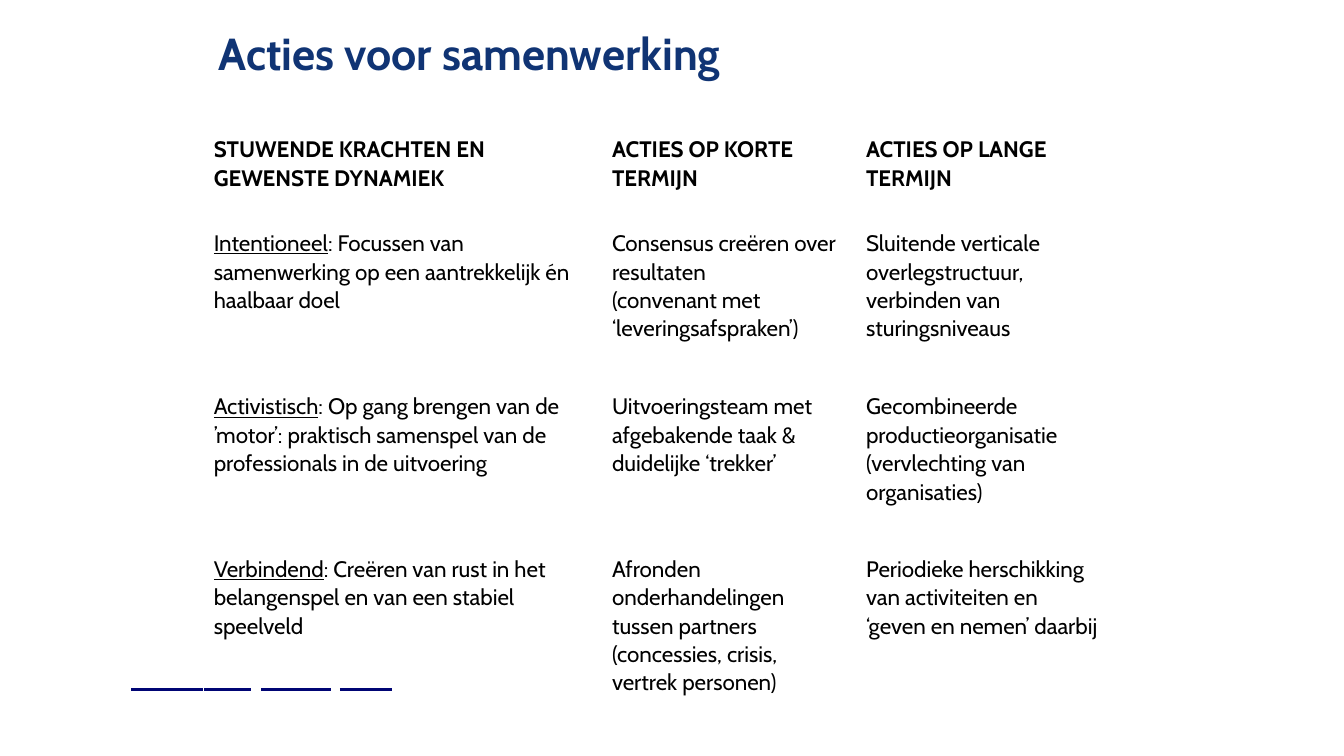
from dataclasses import dataclass

from lxml.etree import SubElement
from pptx import Presentation
from pptx.dml.color import RGBColor
from pptx.enum.shapes import MSO_CONNECTOR
from pptx.oxml.ns import qn
from pptx.util import Inches, Pt


@dataclass(frozen=True)
class Theme:
    font: str = "Cabin"
    title: str = "103474"
    body: str = "000000"
    rule: str = "000574"
    title_size: float = 32
    body_size: float = 16
    rule_width: float = 2.25


THEME = Theme()
WIDTHS = (3.95, 2.52, 2.52)
HEIGHTS = (0.93, 1.62, 1.61, 1.62)
DASHES = ((0, 1.19), (1.29, 0.69), (2.07, 0.52))  # offset, length

# A cell is a list of paragraphs; a (term, rest) pair underlines the term.
ROWS = [
    [
        ["STUWENDE KRACHTEN EN", "GEWENSTE DYNAMIEK"],
        ["ACTIES OP KORTE TERMIJN"],
        ["ACTIES OP LANGE TERMIJN"],
    ],
    [
        [("Intentioneel", ": Focussen van samenwerking op een aantrekkelijk én haalbaar doel")],
        ["Consensus creëren over resultaten", "(convenant met ‘leveringsafspraken’)"],
        ["Sluitende verticale overlegstructuur, verbinden van sturingsniveaus"],
    ],
    [
        [("Activistisch", ": Op gang brengen van de ’motor’: praktisch samenspel "
          "van de professionals in de uitvoering")],
        ["Uitvoeringsteam met afgebakende taak & duidelijke ‘trekker’"],
        ["Gecombineerde productieorganisatie (vervlechting van organisaties)"],
    ],
    [
        [("Verbindend", ": Creëren van rust in het belangenspel en van een stabiel speelveld")],
        ["Afronden onderhandelingen tussen partners (concessies, crisis, vertrek personen)"],
        ["Periodieke herschikking van activiteiten en ‘geven en nemen’ daarbij"],
    ],
]


def write(frame, paras, size=THEME.body_size, color=THEME.body, bold=False, spacing=None):
    """Fill a text frame; in a (term, rest) pair the term is underlined."""
    frame.word_wrap = True
    for i, item in enumerate(paras):
        para = frame.paragraphs[0] if i == 0 else frame.add_paragraph()
        if spacing:
            para.line_spacing = spacing
        parts = (item,) if isinstance(item, str) else item
        for j, part in enumerate(parts):
            run = para.add_run()
            run.text = part
            font = run.font
            font.name, font.size, font.bold = THEME.font, Pt(size), bold
            font.color.rgb = RGBColor.from_string(color)
            if len(parts) > 1:
                font.underline = j == 0


def add_title(slide, left, top, width, height):
    box = slide.shapes.add_textbox(Inches(left), Inches(top), Inches(width), Inches(height))
    frame = box.text_frame
    frame.margin_left = frame.margin_right = frame.margin_bottom = 0
    frame.margin_top = Inches(0.04)
    write(frame, ["Acties voor samenwerking"], size=THEME.title_size,
          color=THEME.title, bold=True)


def add_grid(slide, left, top):
    shape = slide.shapes.add_table(
        len(ROWS), len(WIDTHS), Inches(left), Inches(top),
        Inches(sum(WIDTHS)), Inches(sum(HEIGHTS)))
    table = shape.table
    table.first_row = table.horz_banding = False
    for col, width in zip(table.columns, WIDTHS):
        col.width = Inches(width)
    for r, (row, height) in enumerate(zip(ROWS, HEIGHTS)):
        table.rows[r].height = Inches(height)
        for c, paras in enumerate(row):
            cell = table.cell(r, c)
            cell.fill.background()
            cell.margin_left = cell.margin_right = Inches(0.1)
            cell.margin_top = cell.margin_bottom = Inches(0.05)
            write(cell.text_frame, paras, bold=r == 0, spacing=1.05)


def add_dashes(slide, left, top):
    for start, length in DASHES:
        x = left + start
        line = slide.shapes.add_connector(
            MSO_CONNECTOR.STRAIGHT, Inches(x), Inches(top), Inches(x + length), Inches(top))
        line.line.color.rgb = RGBColor.from_string(THEME.rule)
        line.line.width = Pt(THEME.rule_width)
        SubElement(line.element.spPr, qn("a:effectLst"))


def main():
    deck = Presentation()
    deck.slide_width, deck.slide_height = Inches(13.33), Inches(7.5)
    slide = deck.slides.add_slide(deck.slide_layouts[6])
    add_dashes(slide, 1.3, 6.84)
    add_grid(slide, 2.02, 1.29)
    add_title(slide, 2.17, 0.21, 8.99, 0.71)
    deck.save("out.pptx")


if __name__ == "__main__":
    main()
